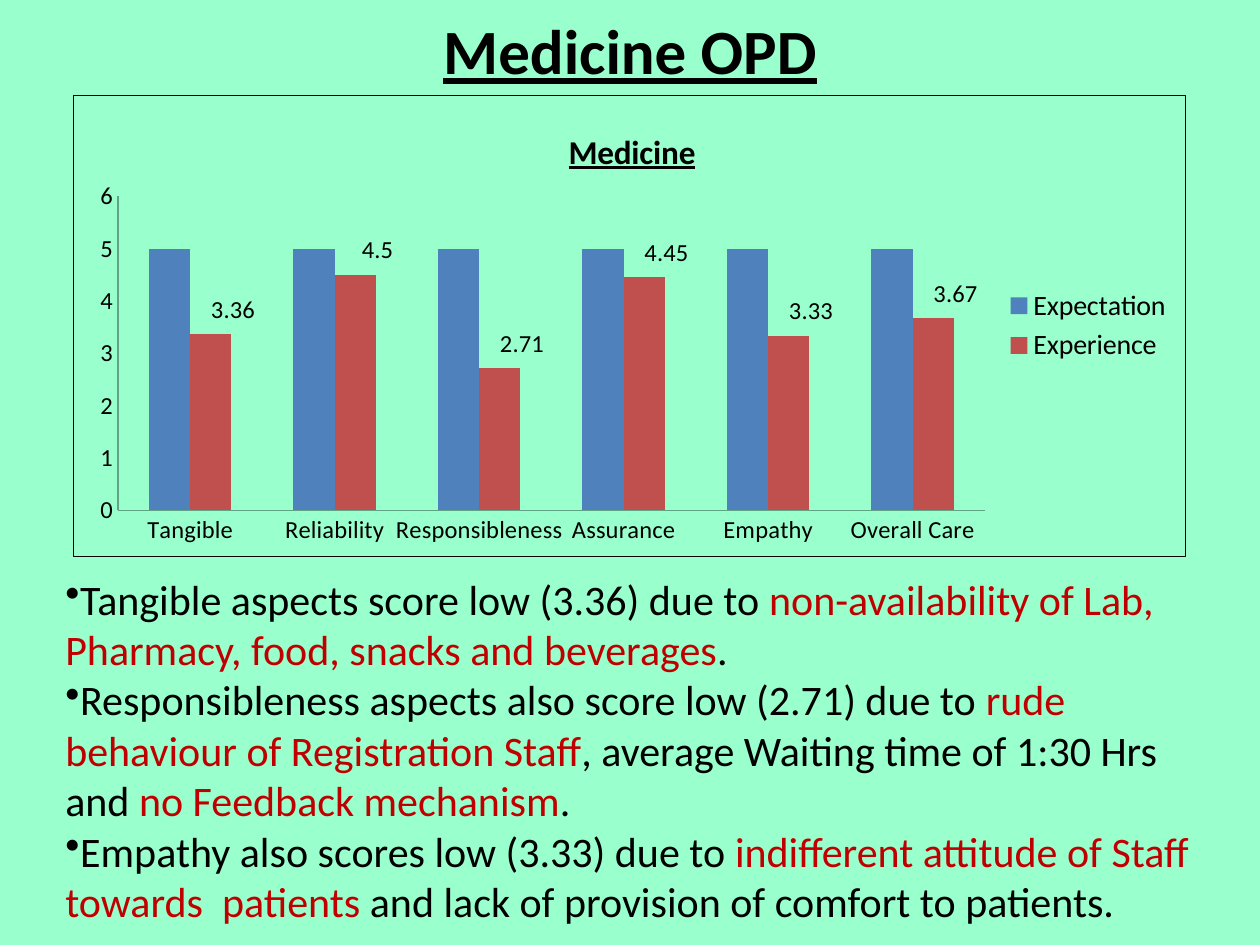
from lxml.etree import SubElement
from pptx import Presentation
from pptx.chart.data import CategoryChartData
from pptx.dml.color import RGBColor
from pptx.enum.chart import XL_CHART_TYPE, XL_LABEL_POSITION, XL_LEGEND_POSITION, XL_TICK_MARK
from pptx.enum.text import MSO_ANCHOR, PP_ALIGN
from pptx.oxml import parse_xml
from pptx.oxml.ns import nsdecls, qn
from pptx.util import Inches, Pt

COLORS = {
    "background": "99FFCC",
    "text": "000000",
    "highlight": "C00000",
    "axis": "5FA585",
    "Expectation": "4F81BD",
    "Experience": "C0504D",
}
CATEGORIES = ["Tangible", "Reliability", "Responsibleness", "Assurance", "Empathy", "Overall Care"]
SCORES = {
    "Expectation": [5] * len(CATEGORIES),
    "Experience": [3.36, 4.5, 2.71, 4.45, 3.33, 3.67],
}
# Each finding is a list of (text, colour name) runs.
FINDINGS = [
    [("Tangible aspects score low (3.36) due to ", "text"),
     ("non-availability of Lab, Pharmacy, food, snacks and beverages", "highlight"),
     (".", "text")],
    [("Responsibleness aspects also score low (2.71) due to ", "text"),
     ("rude behaviour of Registration Staff", "highlight"),
     (", average Waiting time of 1:30 Hrs and ", "text"),
     ("no Feedback mechanism", "highlight"),
     (".", "text")],
    [("Empathy also scores low (3.33) due to ", "text"),
     ("indifferent attitude of Staff towards  patients", "highlight"),
     (" and lack of provision of comfort to patients.", "text")],
]


def color(name):
    return RGBColor.from_string(COLORS[name])


def manual_layout(**values):
    """Return a chart layout element; values are given in schema order."""
    layout = parse_xml(f"<c:layout {nsdecls('c')}><c:manualLayout/></c:layout>")
    for tag, value in values.items():
        SubElement(layout[0], qn(f"c:{tag}")).set("val", str(value))
    return layout


class SlideBuilder:
    font_name = "Calibri"

    def __init__(self, presentation):
        self.slide = presentation.slides.add_slide(presentation.slide_layouts[6])
        fill = self.slide.background.fill
        fill.solid()
        fill.fore_color.rgb = color("background")

    def style(self, font, size, color_name="text", bold=False, underline=False):
        font.name = self.font_name
        font.size = Pt(size)
        font.bold = bold
        font.underline = underline
        font.color.rgb = color(color_name)

    def text_frame(self, left, top, width, height):
        box = self.slide.shapes.add_textbox(Inches(left), Inches(top), Inches(width), Inches(height))
        box.text_frame.word_wrap = True
        return box.text_frame

    def title(self, text, *bounds):
        frame = self.text_frame(*bounds)
        frame.vertical_anchor = MSO_ANCHOR.MIDDLE
        frame.text = text
        paragraph = frame.paragraphs[0]
        paragraph.alignment = PP_ALIGN.CENTER
        self.style(paragraph.runs[0].font, 36, bold=True, underline=True)

    def bullets(self, items, *bounds):
        frame = self.text_frame(*bounds)
        for index, runs in enumerate(items):
            paragraph = frame.add_paragraph() if index else frame.paragraphs[0]
            SubElement(paragraph._p.get_or_add_pPr(), qn("a:buChar")).set("char", "•")
            for text, color_name in runs:
                run = paragraph.add_run()
                run.text = text
                self.style(run.font, 24, color_name)

    def column_chart(self, title, categories, scores, left, top, width, height):
        data = CategoryChartData()
        data.categories = categories
        for name, values in scores.items():
            data.add_series(name, values)
        chart = self.slide.shapes.add_chart(
            XL_CHART_TYPE.COLUMN_CLUSTERED,
            Inches(left), Inches(top), Inches(width), Inches(height), data).chart
        self.style(chart.font, 16)
        self.chart_title(chart, title)
        self.chart_border(chart)
        chart.has_legend = True
        chart.legend.position = XL_LEGEND_POSITION.RIGHT
        chart.legend.include_in_layout = False
        self.style(chart.legend.font, 16)

        for axis in (chart.category_axis, chart.value_axis):
            axis.has_major_gridlines = False
            axis.major_tick_mark = axis.minor_tick_mark = XL_TICK_MARK.NONE
            axis.format.line.color.rgb = color("axis")
            self.style(axis.tick_labels.font, 14)
        chart.value_axis.minimum_scale = 0
        chart.value_axis.maximum_scale = 6
        chart.value_axis.major_unit = 1

        plot = chart.plots[0]
        plot.gap_width = 150
        plot.overlap = 0
        plot.vary_by_categories = False
        for series in plot.series:
            series.format.fill.solid()
            series.format.fill.fore_color.rgb = color(series.name)
        self.value_labels(plot.series[1], len(categories))

        plot_area = chart._chartSpace.chart.plotArea
        for layout in plot_area.findall(qn("c:layout")):
            plot_area.remove(layout)
        plot_area.insert(0, manual_layout(
            layoutTarget="inner", xMode="edge", yMode="edge", x=0.04, y=0.22, w=0.78, h=0.68))

    def chart_title(self, chart, text):
        chart.has_title = True
        frame = chart.chart_title.text_frame
        frame.text = text
        self.style(frame.paragraphs[0].runs[0].font, 19, bold=True, underline=True)
        title = chart._chartSpace.chart.find(qn("c:title"))
        for layout in title.findall(qn("c:layout")):
            title.remove(layout)
        title.find(qn("c:tx")).addnext(manual_layout(xMode="edge", yMode="edge", x=0.44, y=0.06))

    def chart_border(self, chart):
        chart._chartSpace.chart.addnext(parse_xml(
            f"<c:spPr {nsdecls('c', 'a')}><a:noFill/><a:ln w='{Pt(0.5)}'><a:solidFill>"
            f"<a:srgbClr val='{COLORS['text']}'/></a:solidFill></a:ln></c:spPr>"))

    def value_labels(self, series, count):
        """Label each column, moved slightly up and to the right."""
        for index in range(count):
            label = series.points[index].data_label
            self.style(label.font, 14)
            label.position = XL_LABEL_POSITION.OUTSIDE_END
        for element in series._element.iter(qn("c:dLbl")):
            element.find(qn("c:idx")).addnext(manual_layout(x=0.02, y=-0.01))


def main():
    presentation = Presentation()
    presentation.slide_width = Inches(10)
    presentation.slide_height = Inches(7.5)
    builder = SlideBuilder(presentation)
    builder.title("Medicine OPD", 0.5, 0.08, 9, 0.62)
    builder.column_chart("Medicine", CATEGORIES, SCORES, 0.58, 0.75, 8.83, 3.67)
    builder.bullets(FINDINGS, 0.42, 4.5, 9.17, 2.93)
    presentation.save("out.pptx")


if __name__ == "__main__":
    main()
